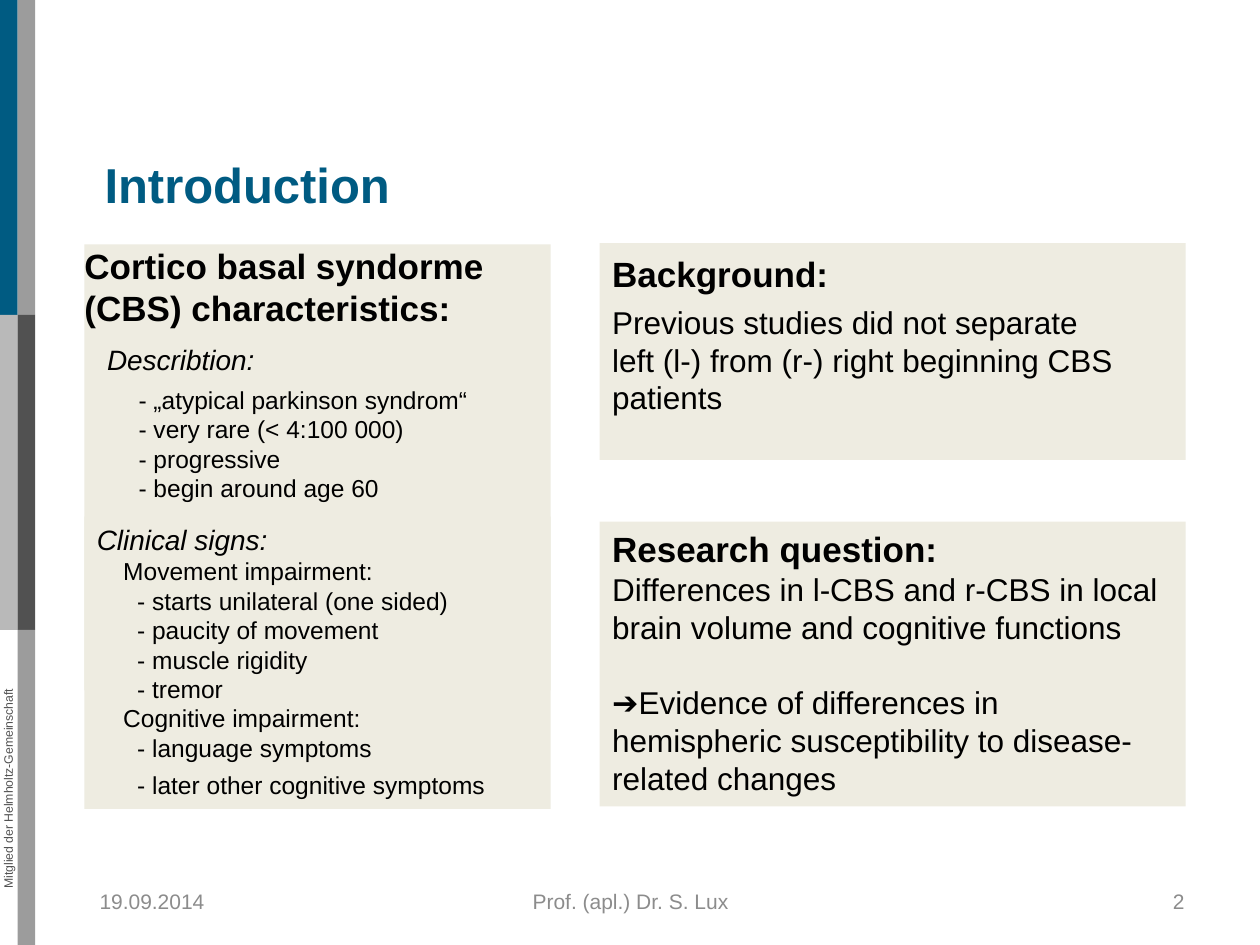
from pptx import Presentation
from pptx.dml.color import RGBColor
from pptx.enum.shapes import MSO_SHAPE as Shape
from pptx.enum.text import MSO_ANCHOR as Anchor, MSO_AUTO_SIZE as AutoSize, PP_ALIGN as Align
from pptx.util import Inches, Pt

WIDTH, HEIGHT = 10, 7.5
BAR, BAND = 0.14, HEIGHT / 3
LEFT, RIGHT = (0.67, 3.7), (4.76, 4.65)  # left edge and width of each column
COLORS = {"blue": "005B82", "silver": "B9B9B9", "gray": "9C9C9C", "dark": "515151",
          "panel": "EEECE1", "text": "000000", "footer": "8C8C8C"}
INSETS = (0.1, 0.05, 0.1, 0.05)

STYLES = {
    "title": {"size": 28, "bold": True, "color": "blue"},
    "heading": {"size": 20, "bold": True},
    "topic": {"size": 16, "italic": True},
    "body": {"size": 18},
    "item": {"size": 14},
    "footer": {"size": 12, "color": "footer"},
    "side": {"size": 7, "color": "dark"},
}

# Each line: text, style, indent in inches, space before in points
CHARACTERISTICS = [
    ("Cortico basal syndorme (CBS) characteristics:", "heading", 0, 0),
    ("Describtion:", "topic", 0.18, 8),
    ("- „atypical parkinson syndrom“", "item", 0.43, 5),
    ("- very rare (< 4:100 000)", "item", 0.43, 0),
    ("- progressive", "item", 0.43, 0),
    ("- begin around age 60", "item", 0.43, 0),
]
SIGNS = [
    ("Clinical signs:", "topic", 0, 0),
    ("Movement impairment:", "item", 0.21, 0),
    ("- starts unilateral (one sided)", "item", 0.32, 0),
    ("- paucity of movement", "item", 0.32, 0),
    ("- muscle rigidity", "item", 0.32, 0),
    ("- tremor", "item", 0.32, 0),
    ("Cognitive impairment:", "item", 0.21, 0),
    ("- language symptoms", "item", 0.32, 0),
    ("- later other cognitive symptoms", "item", 0.32, 4.5),
]
BACKGROUND = [
    ("Background:", "heading", 0, 0),
    ("Previous studies did not separate", "body", 0, 5),
    ("left (l-) from (r-) right beginning CBS patients", "body", 0, 0),
]
QUESTION = [
    ("Research question:", "heading", 0, 0),
    ("Differences in l-CBS and r-CBS in local brain volume and cognitive functions",
     "body", 0, 0),
    ("➔Evidence of differences in hemispheric susceptibility to disease-related changes",
     "body", 0, 21.6),
]


def rgb(name):
    return RGBColor.from_string(COLORS[name])


def inches(*lengths):
    return [Inches(length) for length in lengths]


def write(frame, lines, insets=INSETS, anchor=Anchor.TOP, align=Align.LEFT):
    sides = ("margin_left", "margin_top", "margin_right", "margin_bottom")
    settings = dict(zip(sides, inches(*insets)), word_wrap=True,
                    auto_size=AutoSize.NONE, vertical_anchor=anchor)
    for name, value in settings.items():
        setattr(frame, name, value)
    for index, (text, style, indent, before) in enumerate(lines):
        para = frame.paragraphs[0] if index == 0 else frame.add_paragraph()
        span = para.add_run()
        span.text = text
        look = STYLES[style]
        layout = {"alignment": align, "space_before": Pt(before), "space_after": Pt(0),
                  "line_spacing": Pt(round(1.2 * look["size"], 1))}
        for name, value in layout.items():
            setattr(para, name, value)
        if indent:
            para._p.get_or_add_pPr().set("marL", str(Inches(indent)))
            para._p.get_or_add_pPr().set("indent", "0")
        font = {"name": "Arial", "size": Pt(look["size"]),
                "bold": look.get("bold", False), "italic": look.get("italic", False)}
        for name, value in font.items():
            setattr(span.font, name, value)
        span.font.color.rgb = rgb(look.get("color", "text"))


def add_block(page, color, left, top, width, height):
    block = page.shapes.add_shape(Shape.RECTANGLE, *inches(left, top, width, height))
    block.shadow.inherit = False
    block.fill.solid()
    block.fill.fore_color.rgb = rgb(color)
    block.line.fill.background()
    return block


def add_panel(page, column, top, height, lines, insets=INSETS):
    left, width = column
    panel = add_block(page, "panel", left, top, width, height)
    write(panel.text_frame, lines, insets)


def add_label(page, text, style, place, **options):
    box = page.shapes.add_textbox(*inches(*place))
    write(box.text_frame, [(text, style, 0, 0)], **options)
    return box


def add_side_bars(page):
    bars = [("blue", 0, 0), ("silver", 0, 1), ("gray", 1, 0), ("dark", 1, 1), ("gray", 1, 2)]
    for color, column, row in bars:
        add_block(page, color, column * BAR, row * BAND, BAR, BAND)
    label = add_label(page, "Mitglied der Helmholtz-Gemeinschaft", "side",
                      (-1.18, 6.2, 2.49, 0.12), insets=(0, 0, 0, 0), align=Align.CENTER)
    label.rotation = 270


def add_title(page, text):
    title = page.shapes.title
    place = dict(zip(("left", "top", "width", "height"), inches(0.83, 1.23, 8.19, 0.63)))
    for name, value in place.items():
        setattr(title, name, value)
    write(title.text_frame, [(text, "title", 0, 0)], insets=(0, 0, 0, 0))


def add_footer(page):
    footers = [("19.09.2014", 0.79, 2.33, Align.LEFT, 0),
               ("Prof. (apl.) Dr. S. Lux", 3.42, 3.17, Align.CENTER, 0.1),
               ("2", 7.17, 2.33, Align.RIGHT, 0.1)]
    for text, left, width, align, inset in footers:
        add_label(page, text, "footer", (left, 6.95, width, 0.4), align=align,
                  anchor=Anchor.MIDDLE, insets=(inset, 0.05, 0.1, 0.05))


def main():
    deck = Presentation()
    deck.slide_width, deck.slide_height = inches(WIDTH, HEIGHT)
    page = deck.slides.add_slide(deck.slide_layouts[5])
    add_side_bars(page)
    add_title(page, "Introduction")
    add_panel(page, LEFT, 1.94, 3.54, CHARACTERISTICS, insets=(0, 0, 0.1, 0.05))
    add_footer(page)
    add_panel(page, RIGHT, 4.14, 2.26, QUESTION)
    add_panel(page, LEFT, 4.1, 2.32, SIGNS)
    add_panel(page, RIGHT, 1.93, 1.72, BACKGROUND, insets=(0.1, 0.07, 0.1, 0.05))
    deck.save("out.pptx")


if __name__ == "__main__":
    main()
